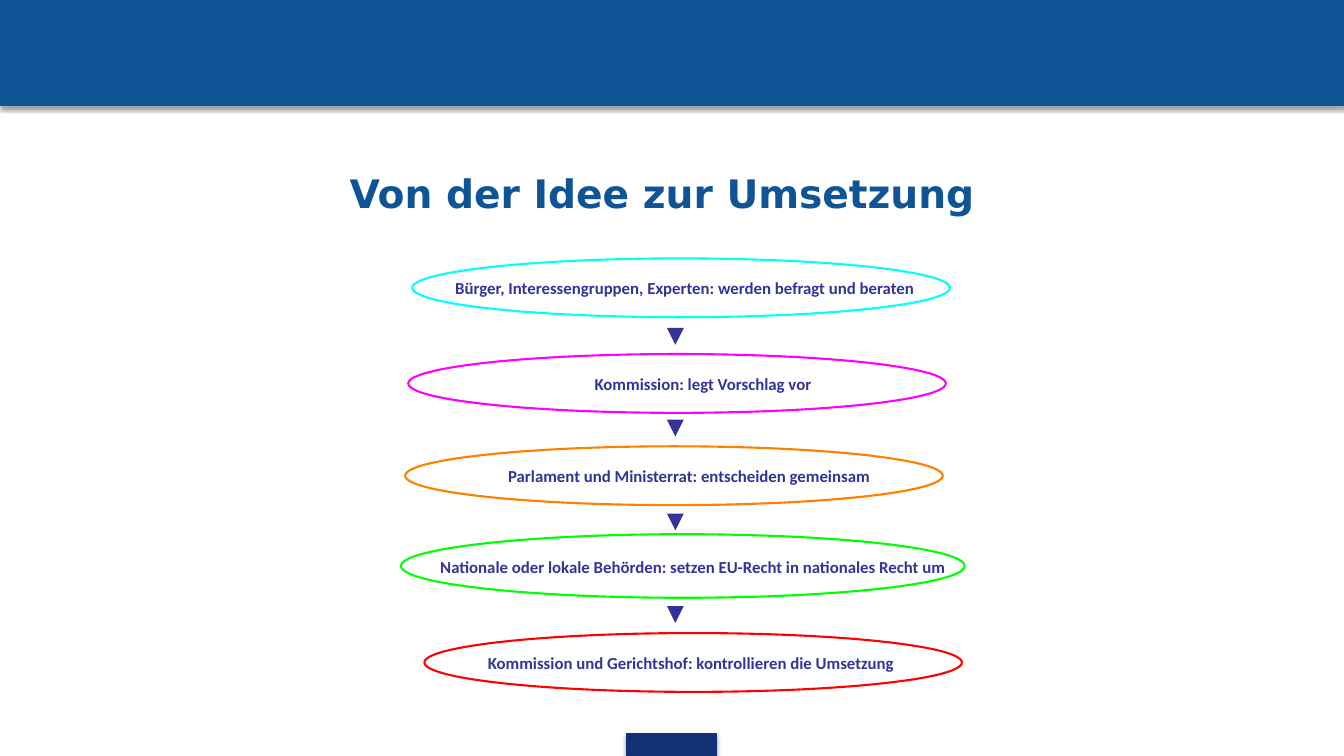
import pptx
import pptx.dml.color
import pptx.enum.shapes
import pptx.enum.text
import pptx.oxml
import pptx.oxml.ns
import pptx.util
import lxml.etree

Pt = pptx.util.Pt
RGBColor = pptx.dml.color.RGBColor
MSO_SHAPE = pptx.enum.shapes.MSO_SHAPE
PP_ALIGN = pptx.enum.text.PP_ALIGN
MSO_ANCHOR = pptx.enum.text.MSO_ANCHOR
qn = pptx.oxml.ns.qn

COLORS = {
    "header": "0F5494",
    "footer": "133176",
    "label": "333399",
    "white": "FFFFFF",
    "cyan": "00FFFF",
    "magenta": "FF00FF",
    "orange": "FF8000",
    "green": "00FF00",
    "red": "FF0000",
}

SHADOW = (
    '<a:effectLst xmlns:a="http://schemas.openxmlformats.org/drawingml/2006/main">'
    '<a:outerShdw blurRad="39370" dist="22860" dir="5400000" rotWithShape="0">'
    '<a:srgbClr val="000000"><a:alpha val="35000"/></a:srgbClr>'
    "</a:outerShdw></a:effectLst>"
)

presentation = pptx.Presentation()
presentation.slide_width = Pt(960)
presentation.slide_height = Pt(540)
slide = presentation.slides.add_slide(presentation.slide_layouts[6])


def add_outlined_shape(kind, left, top, width, height, fill, line, line_width):
    shape = slide.shapes.add_shape(kind, Pt(left), Pt(top), Pt(width), Pt(height))
    shape.shadow.inherit = False
    shape.fill.solid()
    shape.fill.fore_color.rgb = RGBColor.from_string(COLORS[fill])
    shape.line.color.rgb = RGBColor.from_string(COLORS[line])
    shape.line.width = Pt(line_width)
    return shape


def add_text(text, left, top, width, height, size, font, color,
             align=PP_ALIGN.LEFT, anchor=MSO_ANCHOR.TOP):
    box = slide.shapes.add_textbox(Pt(left), Pt(top), Pt(width), Pt(height))
    frame = box.text_frame
    frame.word_wrap = True
    frame.vertical_anchor = anchor
    paragraph = frame.paragraphs[0]
    paragraph.text = text
    paragraph.alignment = align
    paragraph.font.size = Pt(size)
    paragraph.font.name = font
    paragraph.font.bold = True
    paragraph.font.color.rgb = RGBColor.from_string(COLORS[color])


bars = [
    ("header", 0, 0, 960, 75.6),
    ("footer", 447.5, 524.2, 64.4, 15.8),
]
for color, left, top, width, height in bars:
    bar = add_outlined_shape(MSO_SHAPE.RECTANGLE, left, top, width, height, color, color, 0.75)
    properties = bar.element.spPr
    properties.remove(properties.find(qn("a:effectLst")))
    properties.append(pptx.oxml.parse_xml(SHADOW))

add_text("Von der Idee zur Umsetzung", 242.6, 117.4, 478, 41,
         size=28, font="DejaVu Sans", color="header")

steps = [
    ("Bürger, Interessengruppen, Experten: werden befragt und beraten",
     "cyan", 294.5, 184.6, 384, 42, 300.2, 190.8),
    ("Kommission: legt Vorschlag vor ",
     "magenta", 291.6, 252.9, 384, 42, 314.6, 259.2),
    ("Parlament und Ministerrat: entscheiden gemeinsam ",
     "orange", 289.4, 318.8, 384, 42, 304.6, 324.9),
    ("Nationale oder lokale Behörden: setzen EU-Recht in nationales Recht um",
     "green", 286.4, 381.6, 402.6, 45.4, 306, 389.5),
    ("Kommission und Gerichtshof: kontrollieren die Umsetzung",
     "red", 303.1, 452.2, 384, 42, 304.6, 458.6),
]
for text, color, left, top, width, height, text_left, text_top in steps:
    add_outlined_shape(MSO_SHAPE.OVAL, left, top, width, height, "white", color, 1.5)
    add_text(text, text_left, text_top, 378, 30.2, size=12, font="Calibri", color="label",
             align=PP_ALIGN.CENTER, anchor=MSO_ANCHOR.MIDDLE)

for arrow_top in (240.5, 306, 373, 439.2):
    arrow = slide.shapes.add_connector(
        pptx.enum.shapes.MSO_CONNECTOR.STRAIGHT,
        Pt(482.4), Pt(arrow_top), Pt(482.4), Pt(arrow_top + 5.8))
    arrow.line.color.rgb = RGBColor.from_string(COLORS["label"])
    arrow.line.width = Pt(4)
    lxml.etree.SubElement(arrow.line._get_or_add_ln(), qn("a:tailEnd"), type="triangle")
    lxml.etree.SubElement(arrow.element.spPr, qn("a:effectLst"))

presentation.save("out.pptx")
